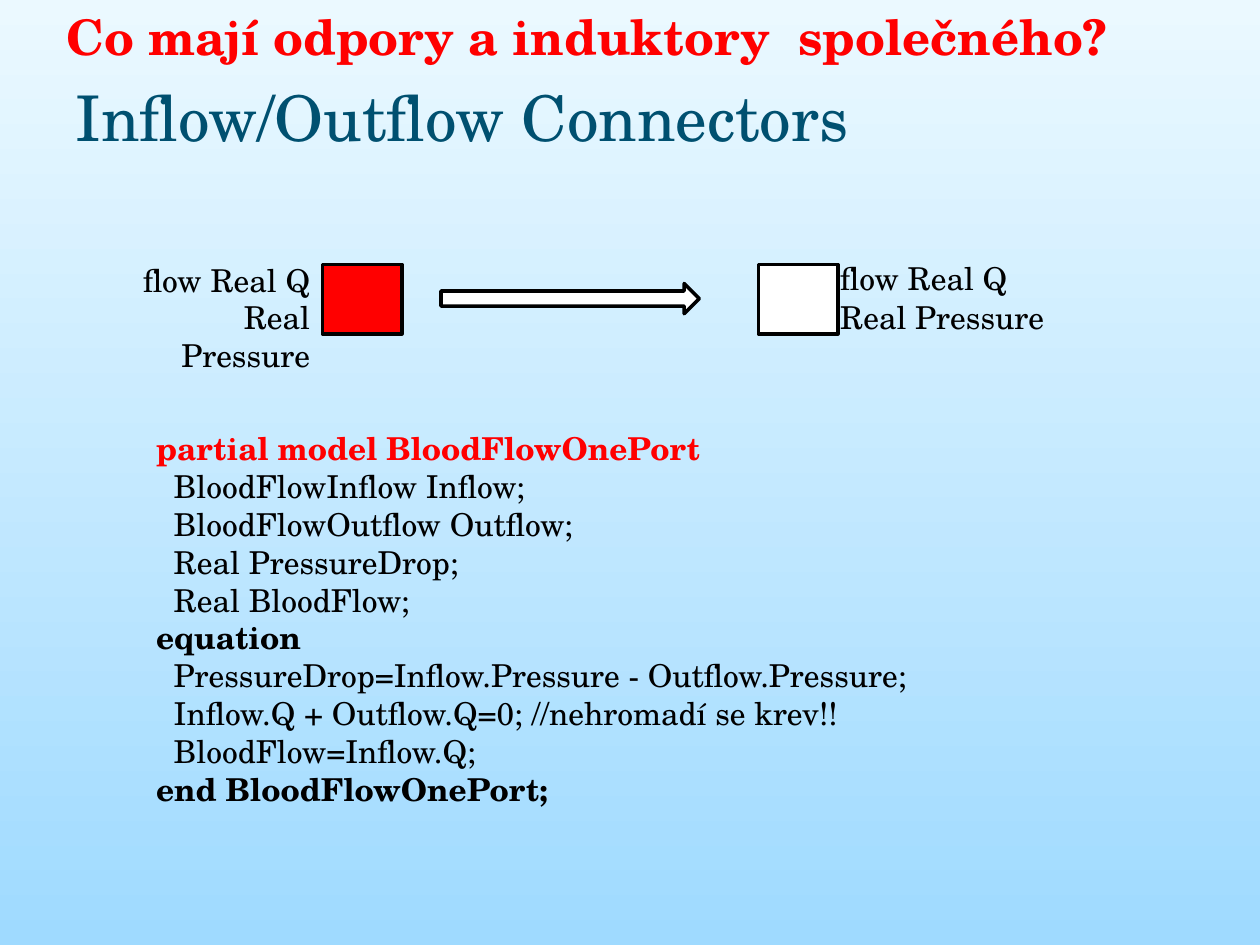
from pptx import Presentation
from pptx.dml.color import RGBColor
from pptx.enum.shapes import MSO_SHAPE
from pptx.enum.text import MSO_ANCHOR, PP_ALIGN
from pptx.util import Inches, Pt

FONT = "TeX Gyre Schola"
BLACK = RGBColor(0x00, 0x00, 0x00)
WHITE = RGBColor(0xFF, 0xFF, 0xFF)
RED = RGBColor(0xFF, 0x00, 0x00)
TEAL = RGBColor(0x00, 0x50, 0x70)
SKY_TOP = RGBColor(0xEB, 0xF9, 0xFF)
SKY_BOTTOM = RGBColor(0x9F, 0xDA, 0xFF)
CODE_INDENT = Inches(0.14)

MODEL_LINES = [
    ("partial model BloodFlowOnePort", True, RED),
    ("BloodFlowInflow Inflow;", False, BLACK),
    ("BloodFlowOutflow Outflow;", False, BLACK),
    ("Real PressureDrop;", False, BLACK),
    ("Real BloodFlow;", False, BLACK),
    ("equation", True, BLACK),
    ("PressureDrop=Inflow.Pressure - Outflow.Pressure;", False, BLACK),
    ("Inflow.Q + Outflow.Q=0; //nehromadí se krev!!", False, BLACK),
    ("BloodFlow=Inflow.Q;", False, BLACK),
    ("end BloodFlowOnePort;", True, BLACK),
]

CONNECTOR_LABELS = [
    ("flow Real Q", 6.57, 2.01, 2.83, PP_ALIGN.LEFT),
    ("Real Pressure", 6.57, 2.32, 2.44, PP_ALIGN.LEFT),
    ("flow Real Q", 0.59, 2.02, 1.97, PP_ALIGN.RIGHT),
    ("Real Pressure", 0.91, 2.32, 1.65, PP_ALIGN.RIGHT),
]


class SlideBuilder:
    """Holds the text style and the current slide, and adds elements to it."""

    def __init__(self, slide, font=FONT, size=18):
        self.slide = slide
        self.font = font
        self.size = size

    def background(self, top_color, bottom_color):
        fill = self.slide.background.fill
        fill.gradient()
        fill.gradient_angle = 270
        for stop, color in zip(fill.gradient_stops, (top_color, bottom_color)):
            stop.color.rgb = color

    def run(self, paragraph, text, color=BLACK, size=None, bold=False):
        run = paragraph.add_run()
        run.text = text
        run.font.name = self.font
        run.font.size = Pt(size or self.size)
        run.font.bold = bold
        run.font.color.rgb = color

    def title(self, text, left, top, width, height):
        title = self.slide.shapes.title
        title.left, title.top = Inches(left), Inches(top)
        title.width, title.height = Inches(width), Inches(height)
        title.text_frame.vertical_anchor = MSO_ANCHOR.MIDDLE
        paragraph = title.text_frame.paragraphs[0]
        paragraph.alignment = PP_ALIGN.LEFT
        self.run(paragraph, text, TEAL, 36)

    def text_frame(self, left, top, width, height):
        box = self.slide.shapes.add_textbox(
            Inches(left), Inches(top), Inches(width), Inches(height))
        box.text_frame.word_wrap = True
        return box.text_frame

    def label(self, text, left, top, width, height=0.4,
              alignment=PP_ALIGN.LEFT, **style):
        paragraph = self.text_frame(left, top, width, height).paragraphs[0]
        paragraph.alignment = alignment
        self.run(paragraph, text, **style)

    def code(self, lines, left, top, width, height):
        frame = self.text_frame(left, top, width, height)
        for index, (text, bold, color) in enumerate(lines):
            paragraph = frame.add_paragraph() if index else frame.paragraphs[0]
            if not bold:
                paragraph._p.get_or_add_pPr().set("marL", str(CODE_INDENT))
            self.run(paragraph, text, color, bold=bold)

    def shape(self, kind, left, top, width, height, color):
        shape = self.slide.shapes.add_shape(
            kind, Inches(left), Inches(top), Inches(width), Inches(height))
        shape.shadow.inherit = False
        shape.fill.solid()
        shape.fill.fore_color.rgb = color
        shape.line.color.rgb = BLACK
        shape.line.width = Pt(2)


def main():
    presentation = Presentation()
    presentation.slide_width = Inches(10)
    presentation.slide_height = Inches(7.5)
    builder = SlideBuilder(
        presentation.slides.add_slide(presentation.slide_layouts[5]))

    builder.background(SKY_TOP, SKY_BOTTOM)
    builder.label("Co mají odpory a induktory  společného?", 0.43, 0, 9.21, 0.57,
                  color=RED, size=28, bold=True)
    builder.title("Inflow/Outflow Connectors", 0.5, 0.3, 9, 1.25)
    builder.code(MODEL_LINES, 1.14, 3.36, 7.95, 3.13)

    for left, color in ((2.56, RED), (6.02, WHITE)):
        builder.shape(MSO_SHAPE.RECTANGLE, left, 2.1, 0.63, 0.55, color)
    builder.shape(MSO_SHAPE.RIGHT_ARROW, 3.5, 2.25, 2.05, 0.24, WHITE)
    for text, left, top, width, alignment in CONNECTOR_LABELS:
        builder.label(text, left, top, width, alignment=alignment)

    presentation.save("out.pptx")


if __name__ == "__main__":
    main()
